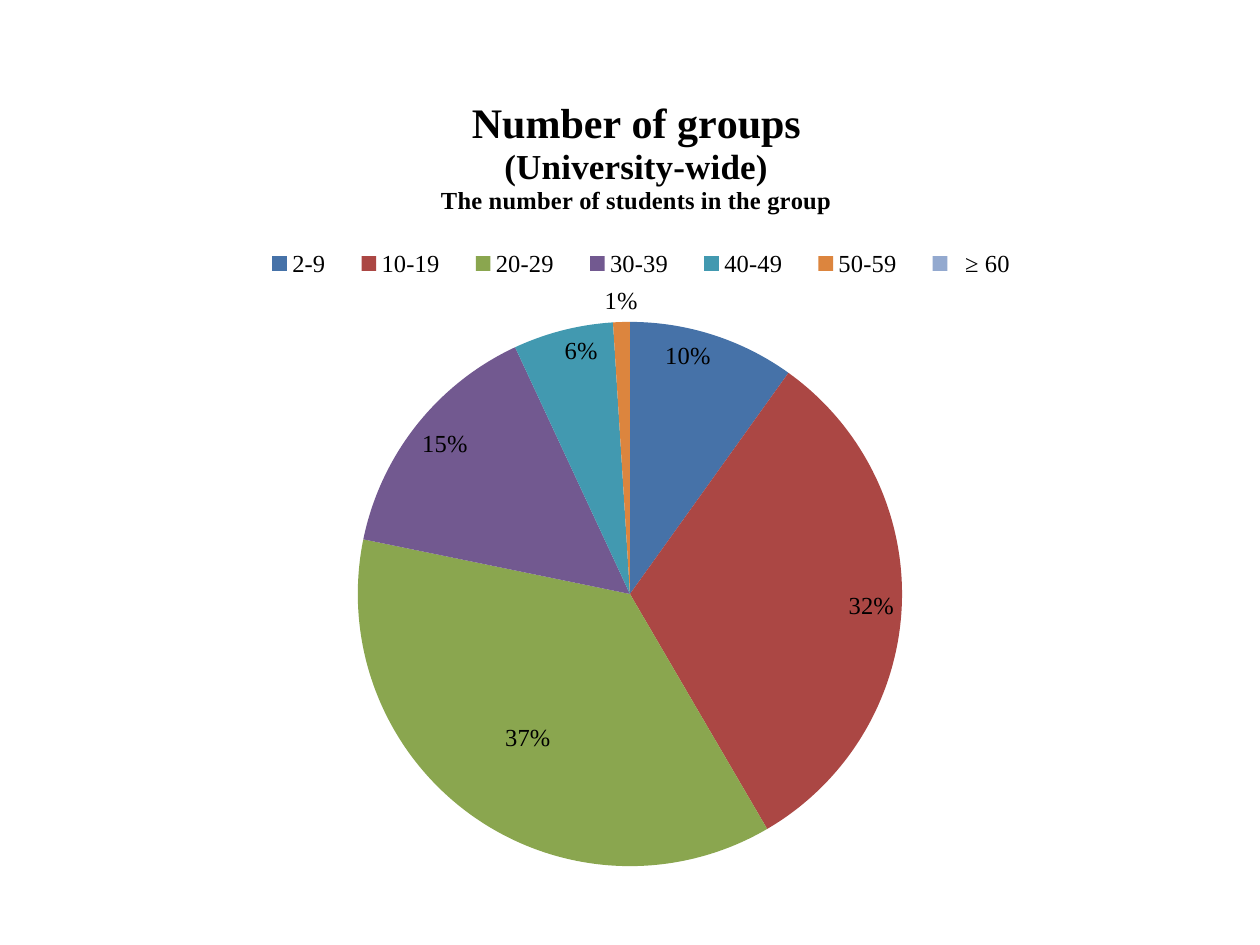
from lxml.etree import SubElement
from pptx import Presentation
from pptx.chart.data import CategoryChartData
from pptx.dml.color import RGBColor
from pptx.enum.chart import XL_CHART_TYPE, XL_LABEL_POSITION, XL_LEGEND_POSITION
from pptx.enum.text import PP_ALIGN
from pptx.oxml.ns import qn
from pptx.util import Inches, Pt

TITLE_LINES = [
    ("Number of groups", 24),
    ("(University-wide)", 20),
    ("The number of students in the group", 14),
]
GROUP_SIZES = [
    ("2-9", 10, "4672A8"),
    ("10-19", 32, "AB4744"),
    ("20-29", 37, "8AA64F"),
    ("30-39", 15, "725990"),
    ("40-49", 6, "4299B0"),
    ("50-59", 1, "DC853E"),
    ("  ≥ 60", None, "93A9CF"),
]
LABEL_EXCEPTIONS = {
    2: XL_LABEL_POSITION.CENTER,
    5: XL_LABEL_POSITION.OUTSIDE_END,
}
LARGEST_GROUP = 2
FONT_NAME = "Times New Roman"


def color(value):
    return RGBColor.from_string(value)


def format_font(font, size=14, bold=False, fill="000000"):
    font.name = FONT_NAME
    font.size = Pt(size)
    font.bold = bold
    font.color.rgb = color(fill)


def write_paragraph(paragraph, text, **style):
    paragraph.alignment = PP_ALIGN.CENTER
    run = paragraph.add_run()
    run.text = text
    format_font(run.font, **style)


def place(element, index, **settings):
    for layout in element.findall(qn("c:layout")):
        element.remove(layout)
    layout = SubElement(element, qn("c:layout"))
    manual = SubElement(layout, qn("c:manualLayout"))
    for name, value in settings.items():
        SubElement(manual, qn(f"c:{name}")).set("val", str(value))
    element.insert(index, layout)


def add_title(chart):
    chart.has_title = True
    frame = chart.chart_title.text_frame
    for number, (text, size) in enumerate(TITLE_LINES):
        paragraph = frame.add_paragraph() if number else frame.paragraphs[0]
        write_paragraph(paragraph, text, size=size, bold=True)
    place(chart.chart_title._element, 1, xMode="edge", yMode="edge", x=0.33, y=0.03)


def add_legend(chart):
    chart.has_legend = True
    legend = chart.legend
    legend.position = XL_LEGEND_POSITION.TOP
    legend.include_in_layout = False
    format_font(legend.font)
    place(legend._element, 1, xMode="edge", yMode="edge", x=0.16, y=0.21, w=0.7, h=0.05)


def format_slices(series):
    for point, (_, _, fill) in zip(series.points, GROUP_SIZES):
        point.format.fill.solid()
        point.format.fill.fore_color.rgb = color(fill)


def format_labels(series):
    labels = series.data_labels
    labels.show_percentage = True
    labels.show_value = False
    labels.number_format = "0%"
    labels.number_format_is_linked = False
    labels.position = XL_LABEL_POSITION.INSIDE_END
    format_font(labels.font)
    for index, position in LABEL_EXCEPTIONS.items():
        label = series.points[index].data_label
        format_font(label.font)
        label.position = position
    for element in labels._element.findall(qn("c:dLbl")):
        element.find(qn("c:showVal")).set("val", "0")
        element.find(qn("c:showPercent")).set("val", "1")
        if element.find(qn("c:idx")).get("val") == str(LARGEST_GROUP):
            place(element, 1, x=-0.02, y=0.04)


def main():
    presentation = Presentation()
    presentation.slide_width = Inches(10)
    presentation.slide_height = Inches(7.5)
    slide = presentation.slides.add_slide(presentation.slide_layouts[6])

    chart_data = CategoryChartData()
    chart_data.categories = [name for name, _, _ in GROUP_SIZES]
    chart_data.add_series("Series 1", [value for _, value, _ in GROUP_SIZES])
    chart = slide.shapes.add_chart(
        XL_CHART_TYPE.PIE, Inches(0.5), Inches(0.55), Inches(9), Inches(6.56), chart_data
    ).chart
    format_font(chart.font, size=10)
    add_title(chart)
    add_legend(chart)

    plot = chart.plots[0]
    plot.vary_by_categories = True
    format_slices(plot.series[0])
    format_labels(plot.series[0])
    place(
        plot._element.getparent(), 0, layoutTarget="inner",
        xMode="edge", yMode="edge", x=0.26, y=0.3, w=0.48, h=0.67,
    )
    presentation.save("out.pptx")


if __name__ == "__main__":
    main()
